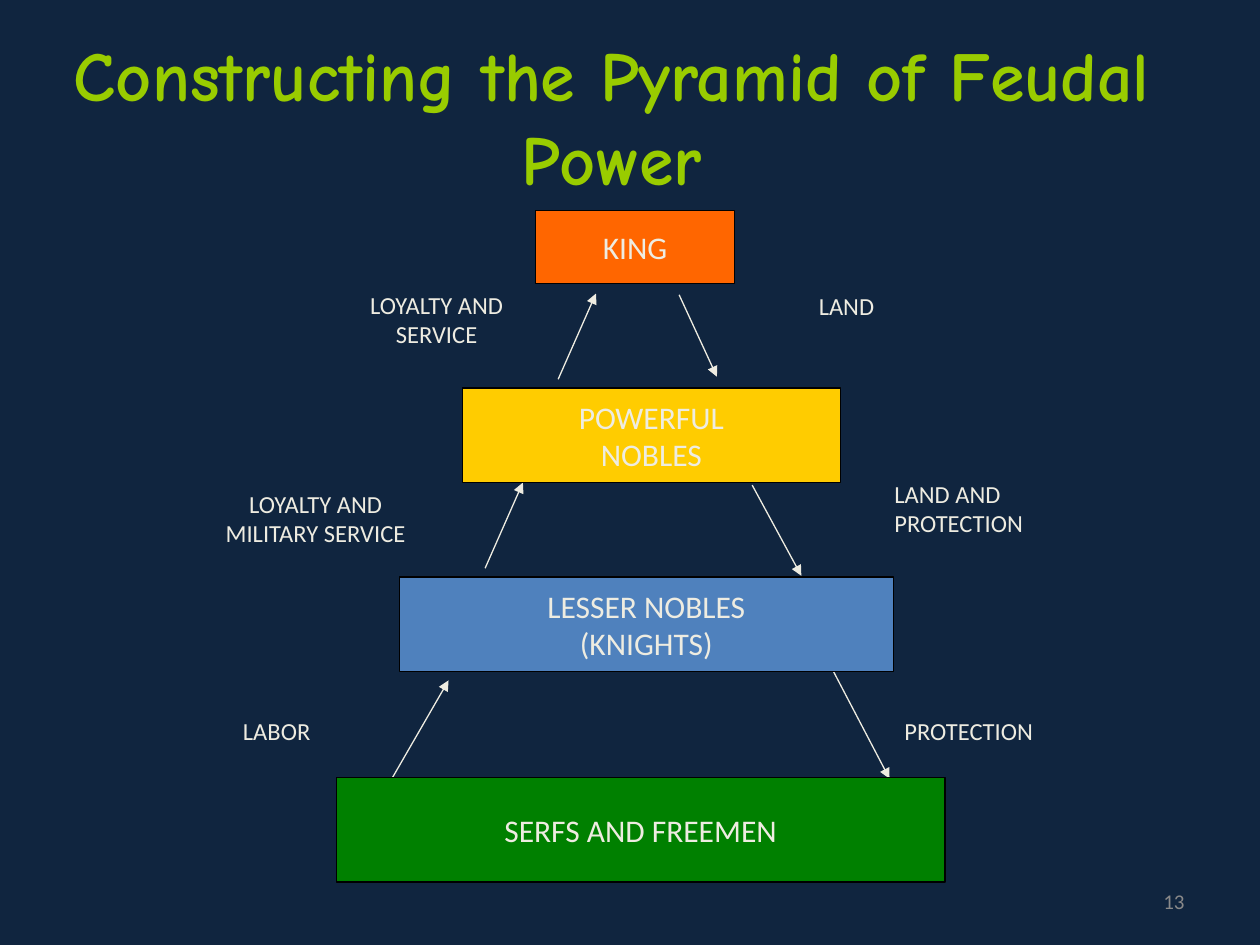
"""Build the slide on the pyramid of feudal power."""
import pptx
import pptx.dml.color
import pptx.enum.shapes
import pptx.enum.text
import pptx.oxml
import pptx.util
from pptx.util import Inches

ALIGN = pptx.enum.text.PP_ALIGN
ANCHOR = pptx.enum.text.MSO_ANCHOR

THEME = {
    "background": "10253F", "text": "EEECE1", "outline": "000000",
    "title": {"name": "Comic Neue", "size": 40, "bold": True, "color": "99CC00"},
    "rank": {"name": "Calibri", "size": 18, "color": "EEECE1"},
    "duty": {"name": "Calibri", "size": 14, "color": "EEECE1"},
    "number": {"name": "Calibri", "size": 12, "color": "898989"},
    "line_width": 0.75,
}

TITLE = ("Constructing the Pyramid of Feudal Power", (0, 0.5, 9.71, 0.83))
PAGE_NUMBER = ("13", (7.17, 6.95, 2.33, 0.4))
RANKS = [
    (["KING"], "FF6600", (4.25, 1.67, 1.58, 0.58)),
    (["POWERFUL", "NOBLES"], "FFCC00", (3.67, 3.08, 3, 0.75)),
    (["LESSER NOBLES", "(KNIGHTS)"], "4F81BD", (3.17, 4.58, 3.92, 0.75)),
    (["SERFS AND FREEMEN"], "008000", (2.67, 6.17, 4.83, 0.83)),
]
DUTIES = [
    (["LOYALTY AND", "SERVICE"], ALIGN.CENTER, (2.67, 2.25, 1.59, 0.57)),
    (["LAND"], ALIGN.LEFT, (6.4, 2.26, 0.74, 0.33)),
    (["LOYALTY AND", "MILITARY SERVICE"], ALIGN.CENTER, (1.5, 3.83, 2.01, 0.57)),
    (["LAND AND", "PROTECTION"], ALIGN.LEFT, (7, 3.75, 1.41, 0.57)),
    (["LABOR"], ALIGN.LEFT, (1.83, 5.63, 0.86, 0.33)),
    (["PROTECTION"], ALIGN.LEFT, (7.08, 5.63, 1.41, 0.33)),
]
ARROWS = [
    (4.43, 3.01, 4.73, 2.33), (5.39, 2.34, 5.69, 2.99),
    (3.85, 4.51, 4.15, 3.83), (5.97, 3.85, 6.36, 4.57),
    (3.11, 6.18, 3.56, 5.4), (6.61, 5.32, 7.06, 6.18),
]


def rgb(value):
    """Return a colour from its hexadecimal form."""
    return pptx.dml.color.RGBColor.from_string(value)


def inches(values):
    """Return lengths for a tuple of inches."""
    return [Inches(value) for value in values]


def write(shape, lines, style, align, anchor=ANCHOR.MIDDLE, wrap=True):
    """Fill a shape with one paragraph for each line."""
    frame = shape.text_frame
    frame.word_wrap, frame.vertical_anchor = wrap, anchor
    frame.auto_size = pptx.enum.text.MSO_AUTO_SIZE.NONE
    frame.text = "\n".join(lines)
    values = dict(THEME[style])
    color = rgb(values.pop("color"))
    values["size"] = pptx.util.Pt(values["size"])
    for para in frame.paragraphs:
        para.alignment = align
        for span in para.runs:
            for name, value in values.items():
                setattr(span.font, name, value)
            span.font.color.rgb = color


def set_line(shape, color):
    """Give a shape or connector its line."""
    shape.line.color.rgb = rgb(color)
    shape.line.width = pptx.util.Pt(THEME["line_width"])


def add_arrow(page, ends):
    """Draw an arrow pointing at its second end."""
    arrow = page.shapes.add_connector(
        pptx.enum.shapes.MSO_CONNECTOR.STRAIGHT, *inches(ends))
    set_line(arrow, THEME["text"])
    namespace = pptx.oxml.ns.nsdecls("a")
    head = pptx.oxml.parse_xml(f'<a:tailEnd {namespace} type="triangle"/>')
    arrow.line._get_or_add_ln().append(head)
    arrow._element.spPr.append(pptx.oxml.parse_xml(f"<a:effectLst {namespace}/>"))


def add_rank(page, lines, color, place):
    """Draw one level of the pyramid."""
    box = page.shapes.add_shape(
        pptx.enum.shapes.MSO_SHAPE.RECTANGLE, *inches(place))
    box.shadow.inherit = False
    box.fill.solid()
    box.fill.fore_color.rgb = rgb(color)
    set_line(box, THEME["outline"])
    write(box, lines, "rank", ALIGN.CENTER)


def main():
    """Build and save the deck."""
    deck = pptx.Presentation()
    deck.slide_width, deck.slide_height = inches((10, 7.5))
    page = deck.slides.add_slide(deck.slide_layouts[5])
    page.background.fill.solid()
    page.background.fill.fore_color.rgb = rgb(THEME["background"])

    text, place = TITLE
    title = page.shapes.title
    title.left, title.top, title.width, title.height = inches(place)
    write(title, [text], "title", ALIGN.CENTER)

    for ends in ARROWS:
        add_arrow(page, ends)
    for rank in RANKS:
        add_rank(page, *rank)
    for lines, align, place in DUTIES:
        label = page.shapes.add_textbox(*inches(place))
        write(label, lines, "duty", align, ANCHOR.TOP, wrap=False)

    text, place = PAGE_NUMBER
    number = page.shapes.add_textbox(*inches(place))
    write(number, [text], "number", ALIGN.RIGHT)
    deck.save("out.pptx")


if __name__ == "__main__":
    main()
